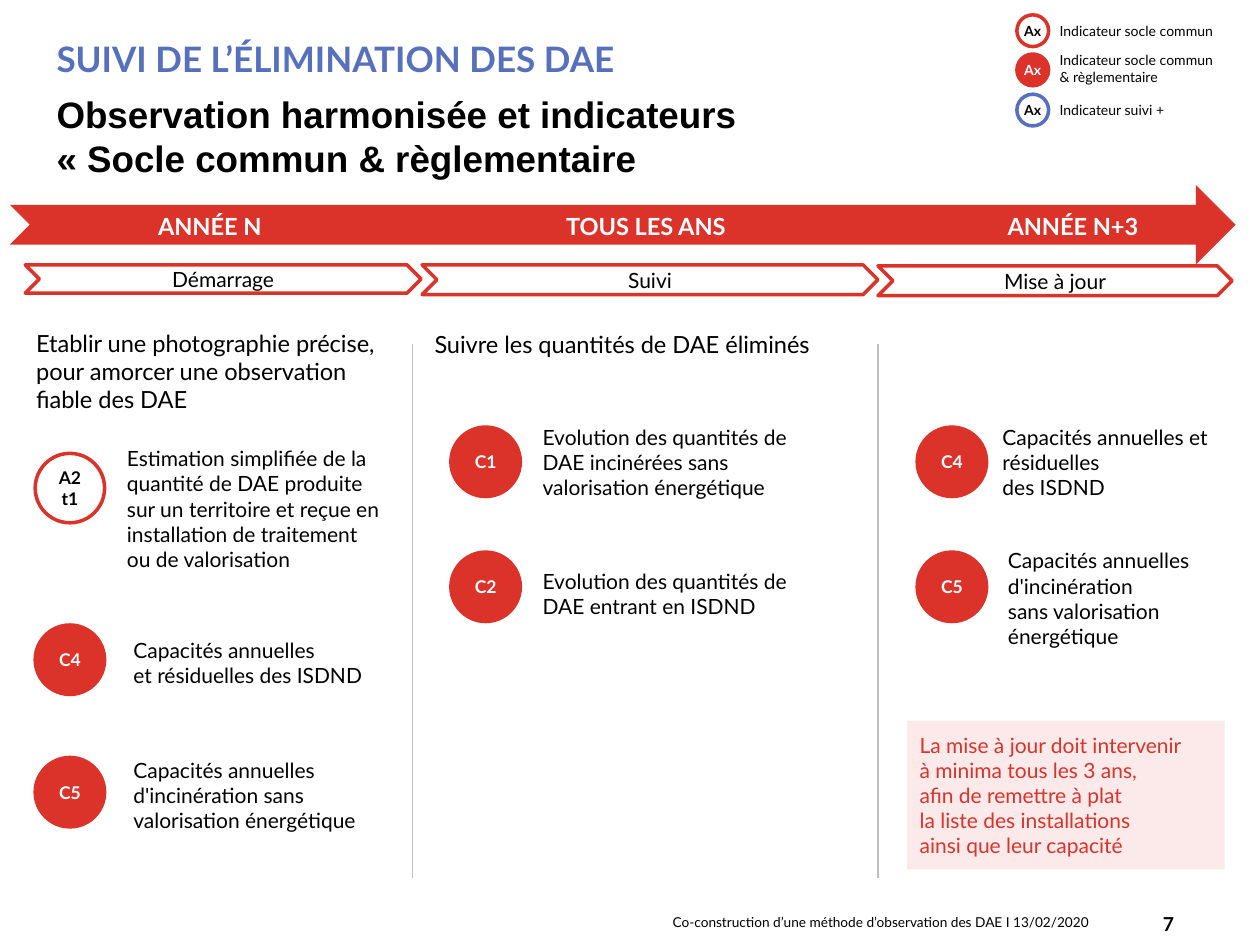
from lxml.etree import SubElement
from pptx import Presentation
from pptx.dml.color import RGBColor
from pptx.enum.shapes import MSO_CONNECTOR, MSO_SHAPE
from pptx.enum.text import MSO_ANCHOR as Anchor, PP_ALIGN as Align
from pptx.oxml.ns import qn
from pptx.util import Cm, Pt

RED = RGBColor(0xDB, 0x32, 0x2A)
BLUE = RGBColor(0x57, 0x70, 0xBE)
GREY = RGBColor(0xBF, 0xBF, 0xBF)
BLACK = RGBColor(0, 0, 0)
WHITE = RGBColor(0xFF, 0xFF, 0xFF)


class Board:
    """Holds the style of the monitoring slide and draws its elements."""

    font = "Lato"
    outline = Pt(2)
    badge_size = 1.4

    def __init__(self, slide):
        self.slide = slide

    def label(self, shape, paragraphs, size, color=BLACK, bold=False,
              align=Align.LEFT, anchor=Anchor.MIDDLE, font=None, spacing=None):
        frame = shape.text_frame
        frame.word_wrap = True
        frame.vertical_anchor = anchor
        for index, wording in enumerate(paragraphs):
            paragraph = frame.add_paragraph() if index else frame.paragraphs[0]
            paragraph.text = wording
            paragraph.alignment = align
            if spacing:
                paragraph.line_spacing = spacing
            paragraph.font.name = font or self.font
            paragraph.font.size = Pt(size)
            paragraph.font.bold = bold
            paragraph.font.color.rgb = color

    def text(self, box, wording, size=12, anchor=Anchor.TOP, **style):
        area = self.slide.shapes.add_textbox(*map(Cm, box))
        self.label(area, [wording], size, anchor=anchor, **style)

    def shape(self, kind, box, fill=None, line=None):
        shape = self.slide.shapes.add_shape(kind, *map(Cm, box))
        shape.shadow.inherit = False
        if fill is None:
            shape.fill.background()
        else:
            shape.fill.solid()
            shape.fill.fore_color.rgb = fill
        if line is None:
            shape.line.fill.background()
        else:
            shape.line.color.rgb = line
            shape.line.width = self.outline
        return shape

    def phase(self, box, wording):
        chevron = self.shape(MSO_SHAPE.CHEVRON, box, WHITE, RED)
        self.label(chevron, [wording], 12, align=Align.CENTER)

    def badge(self, left, top, code, fill=RED, line=RED, size=badge_size, points=10):
        circle = self.shape(MSO_SHAPE.OVAL, (left, top, size, size), fill, line)
        self.label(circle, [code], points, WHITE if fill else BLACK, True, Align.CENTER)
        return circle

    def legend(self, badge_top, text_top, wording, fill, line):
        frame = self.badge(20.5, badge_top, "Ax", fill, line, 0.64, 8).text_frame
        frame.margin_left = frame.margin_right = 0
        frame.margin_top = frame.margin_bottom = 0
        self.text((21.11, text_top, 4.2, 0.61), wording, 8)

    def callout(self, box, paragraphs):
        panel = self.shape(MSO_SHAPE.RECTANGLE, box, RED)
        tint = panel._element.spPr.find(qn("a:solidFill"))[0]
        SubElement(tint, qn("a:alpha"), val="10000")
        self.label(panel, paragraphs, 12, RED)

    def divider(self, x, top, bottom):
        rule = self.slide.shapes.add_connector(
            MSO_CONNECTOR.STRAIGHT, Cm(x), Cm(top), Cm(x), Cm(bottom))
        rule.line.color.rgb = GREY
        rule.line.width = Pt(0.75)
        SubElement(rule._element.spPr, qn("a:effectLst"))


def main():
    deck = Presentation()
    deck.slide_width, deck.slide_height = Cm(25.4), Cm(19.05)
    board = Board(deck.slides.add_slide(deck.slide_layouts[6]))

    board.text((0.89, 0, 19.81, 2.34), "SUIVI DE L’ÉLIMINATION DES DAE", 20,
               Anchor.MIDDLE, color=BLUE, bold=True)
    board.text((0.89, 1.73, 19.79, 2),
               "Observation harmonisée et indicateurs\n« Socle commun & règlementaire",
               21, Anchor.MIDDLE, bold=True, font="Arial")

    board.shape(MSO_SHAPE.NOTCHED_RIGHT_ARROW, (0.2, 3.73, 24.71, 1.6), RED)
    for left, width, year in ((0.51, 7.44, "ANNÉE N"), (9.3, 7.44, "TOUS LES ANS"),
                              (18.67, 5.92, "ANNÉE N+3")):
        board.text((left, 4.14, width, 0.84), year, 13.5,
                   color=WHITE, bold=True, align=Align.CENTER)
    board.phase((0.51, 5.34, 7.98, 0.57), "Démarrage")
    board.phase((8.51, 5.34, 9.19, 0.6), "Suivi")
    board.phase((17.7, 5.36, 7.14, 0.6), "Mise à jour")

    board.text((0.48, 6.5, 7.57, 1.98),
               "Etablir une photographie précise, pour amorcer une observation fiable des DAE",
               13.5)
    board.text((8.51, 6.53, 10.21, 0.84), "Suivre les quantités de DAE éliminés", 13.5)

    start, follow, update = 0.71, 9.09, 18.49
    upper, lower = 8.61, 11.13
    indicators = (
        (start, 9.14, "A2t1", None, (2.31, 8.86, 5.66, 3.33),
         "Estimation simplifiée de la quantité de DAE produite sur un territoire "
         "et reçue en installation de traitement\nou de valorisation"),
        (start, 12.6, "C4", RED, (2.44, 12.73, 5.64, 1.27),
         "Capacités annuelles\net résiduelles des ISDND"),
        (start, 15.27, "C5", RED, (2.44, 15.14, 5.82, 1.8),
         "Capacités annuelles d'incinération sans valorisation énergétique"),
        (follow, upper, "C1", RED, (10.69, 8.43, 5.49, 1.8),
         "Evolution des quantités de DAE incinérées sans valorisation énergétique"),
        (follow, lower, "C2", RED, (10.69, 11.33, 5.92, 1.27),
         "Evolution des quantités de DAE entrant en ISDND"),
        (update, upper, "C4", RED, (19.96, 8.43, 4.95, 1.8),
         "Capacités annuelles et résiduelles\ndes ISDND"),
        (update, lower, "C5", RED, (20.07, 10.92, 4.85, 2.31),
         "Capacités annuelles d'incinération\nsans valorisation énergétique"),
    )
    for left, top, code, fill, box, wording in indicators:
        board.badge(left, top, code, fill)
        board.text(box, wording)

    board.callout((18.29, 14.53, 6.4, 3), (
        "La mise à jour doit intervenir",
        "à minima tous les 3 ans,\nafin de remettre à plat\n"
        "la liste des installations\nainsi que leur capacité"))
    for x in (8.31, 17.7):
        board.divider(x, 6.93, 17.7)

    board.legend(0.3, 0.33, "Indicateur socle commun", None, RED)
    board.legend(1.09, 0.91, "Indicateur socle commun\n& règlementaire", RED, RED)
    board.legend(1.9, 1.93, "Indicateur suivi +", None, BLUE)

    board.text((13.31, 18.24, 10.97, 0.76),
               "Co-construction d’une méthode d’observation des DAE I 13/02/2020",
               7.8, Anchor.MIDDLE, spacing=0.8)
    board.text((22.5, 18.11, 1.42, 1.02), "7", 11, Anchor.MIDDLE,
               bold=True, align=Align.RIGHT)
    deck.save("out.pptx")


if __name__ == "__main__":
    main()
